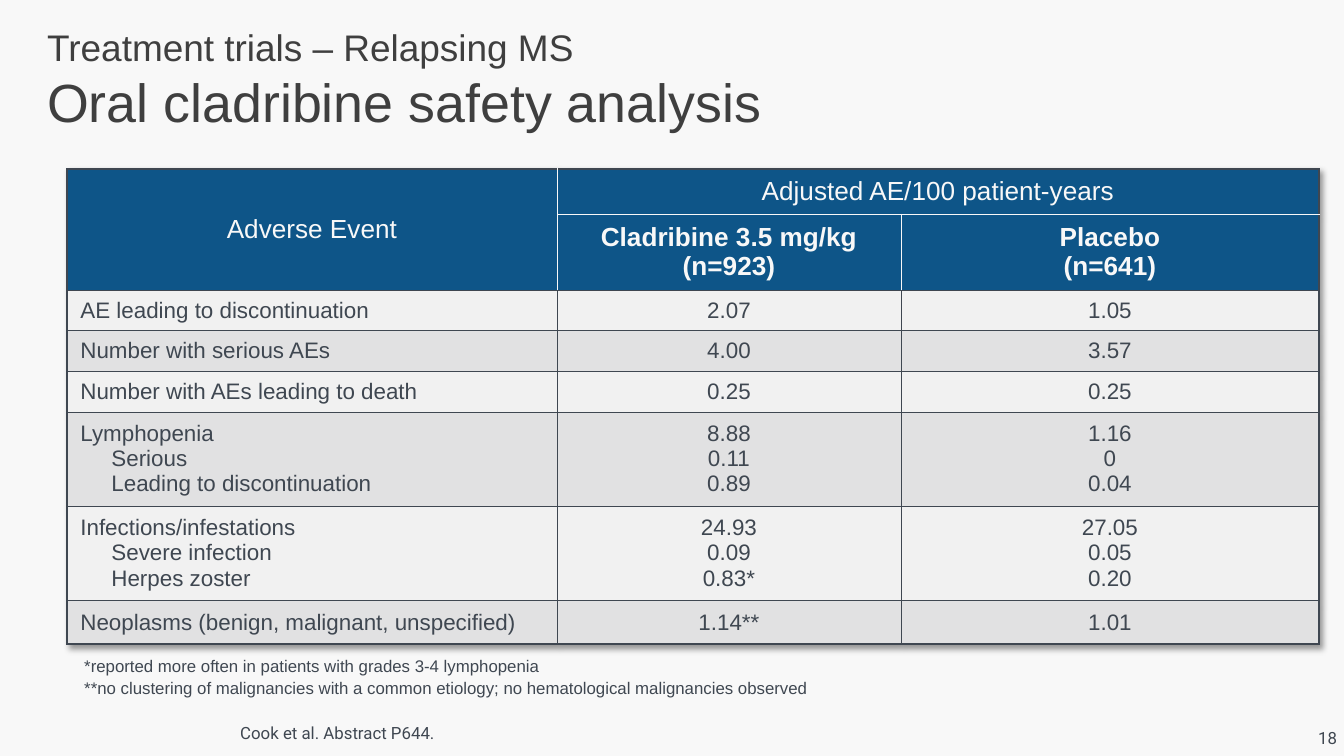
from dataclasses import dataclass

from lxml.etree import SubElement
from pptx import Presentation
from pptx.dml.color import RGBColor
from pptx.enum.text import MSO_ANCHOR, PP_ALIGN
from pptx.oxml.ns import qn
from pptx.util import Pt

SCALE = 9144000 / 1344


def px(length):
    return round(length * SCALE)


@dataclass(frozen=True)
class Theme:
    paper: str = "F8F8F8"
    ink: str = "3F4751"
    heading: str = "3F3F3F"
    header: str = "0E5588"
    bands: tuple = ("F1F1F1", "E1E1E2")
    sans: str = "Arial"
    footer: str = "Roboto"
    kicker_size: float = 19.8
    title_size: float = 28.8
    header_size: float = 14
    body_size: float = 12
    note_size: float = 9
    outer_line: float = 1
    inner_line: float = 0.25


class SlideWriter:
    def __init__(self, slide, theme):
        self.slide = slide
        self.theme = theme
        slide.background.fill.solid()
        slide.background.fill.fore_color.rgb = RGBColor.from_string(theme.paper)

    def style(self, font, color, **values):
        font.color.rgb = RGBColor.from_string(color)
        for name, value in values.items():
            setattr(font, name, value)

    def text_box(self, bounds, anchor, **margins):
        frame = self.slide.shapes.add_textbox(*map(px, bounds)).text_frame
        settings = {"word_wrap": True, "vertical_anchor": anchor}
        settings.update({name: px(value) for name, value in margins.items()})
        for name, value in settings.items():
            setattr(frame, name, value)
        return frame

    def title(self, bounds, kicker, heading):
        theme = self.theme
        para = self.text_box(bounds, MSO_ANCHOR.MIDDLE, margin_right=7).paragraphs[0]
        for text, size in ((kicker, theme.kicker_size), (heading, theme.title_size)):
            if para.runs:
                para.add_line_break()
            span = para.add_run()
            span.text = text
            self.style(span.font, theme.heading, name=theme.sans, size=Pt(size))

    def note(self, bounds, lines, font, anchor=MSO_ANCHOR.TOP, **margins):
        frame = self.text_box(bounds, anchor, **margins)
        frame.text = "\n".join(lines)
        for index, para in enumerate(frame.paragraphs):
            para.space_before = Pt(1 if index else 0)
            self.style(para.font, self.theme.ink, name=font, size=Pt(self.theme.note_size))

    def table(self, left, top, widths, heights):
        frame = self.slide.shapes.add_table(
            len(heights), len(widths), px(left), px(top), px(sum(widths)), px(sum(heights))
        )
        table = frame.table
        table.first_row = table.horz_banding = False
        for column, width in zip(table.columns, widths):
            column.width = px(width)
        for row, height in zip(table.rows, heights):
            row.height = px(height)
        return table

    def table_shadow(self, table):
        effects = SubElement(table._tbl.tblPr, qn("a:effectLst"))
        table._tbl.tblPr.insert(0, effects)
        values = {"blurRad": px(6), "dist": px(5), "dir": 2700000, "algn": "tl", "rotWithShape": 0}
        shadow = SubElement(effects, qn("a:outerShdw"), {k: str(v) for k, v in values.items()})
        color = SubElement(shadow, qn("a:srgbClr"), val="000000")
        SubElement(color, qn("a:alpha"), val="40000")

    def cell(self, cell, lines, fill, align, **font):
        cell.vertical_anchor = MSO_ANCHOR.MIDDLE
        cell.fill.solid()
        cell.fill.fore_color.rgb = RGBColor.from_string(fill)
        cell.text_frame.text = "\n".join(lines)
        color = self.theme.paper if fill == self.theme.header else self.theme.ink
        for index, para in enumerate(cell.text_frame.paragraphs):
            para.alignment = align
            if index and align == PP_ALIGN.LEFT:
                para._p.get_or_add_pPr().set("marL", str(px(31)))
            self.style(para.font, color, name=self.theme.sans, **font)

    def borders(self, cell, sides):
        properties = cell._tc.get_or_add_tcPr()
        for index, (side, (color, width)) in enumerate(sides.items()):
            line = SubElement(properties, qn(f"a:ln{side}"), w=str(Pt(width)))
            properties.insert(index, line)
            fill = SubElement(line, qn("a:solidFill"))
            SubElement(fill, qn("a:srgbClr"), val=color)

    def grid_lines(self, table, header_rows):
        theme = self.theme
        row_count, column_count = len(table.rows), len(table.columns)
        outer = (theme.ink, theme.outer_line)
        inner = (theme.ink, theme.inner_line)
        pale = (theme.paper, theme.inner_line)
        for row in range(row_count):
            for column in range(column_count):
                cell = table.cell(row, column)
                if cell.is_spanned:
                    continue
                right = column + (cell.span_width if cell.is_merge_origin else 1)
                bottom = row + (cell.span_height if cell.is_merge_origin else 1)
                upright = pale if row < header_rows else inner
                self.borders(cell, {
                    "L": upright if column else outer,
                    "R": outer if right == column_count else upright,
                    "T": outer if row == 0 else pale if row < header_rows else inner,
                    "B": outer if bottom == row_count else pale if bottom < header_rows else inner,
                })


HEADERS = {
    (0, 0): (["Adverse Event"], False),
    (0, 1): (["Adjusted AE/100 patient-years"], False),
    (1, 1): (["Cladribine 3.5 mg/kg", "(n=923)"], True),
    (1, 2): (["Placebo", "(n=641)"], True),
}
EVENTS = [
    (["AE leading to discontinuation"], ["2.07"], ["1.05"]),
    (["Number with serious AEs"], ["4.00"], ["3.57"]),
    (["Number with AEs leading to death"], ["0.25"], ["0.25"]),
    (["Lymphopenia", "Serious", "Leading to discontinuation"],
     ["8.88", "0.11", "0.89"], ["1.16", "0", "0.04"]),
    (["Infections/infestations", "Severe infection", "Herpes zoster"],
     ["24.93", "0.09", "0.83*"], ["27.05", "0.05", "0.20"]),
    (["Neoplasms (benign, malignant, unspecified)"], ["1.14**"], ["1.01"]),
]
FOOTNOTES = [
    "*reported more often in patients with grades 3-4 lymphopenia",
    "**no clustering of malignancies with a common etiology; no hematological malignancies observed",
]


def add_safety_table(writer):
    theme = writer.theme
    table = writer.table(67, 169, [490, 344, 418], [45, 76, 40, 41, 40, 94, 94, 44])
    table.cell(0, 0).merge(table.cell(1, 0))
    table.cell(0, 1).merge(table.cell(0, 2))
    for position, (lines, bold) in HEADERS.items():
        writer.cell(table.cell(*position), lines, theme.header, PP_ALIGN.CENTER,
                    size=Pt(theme.header_size), bold=bold)
    for index, event in enumerate(EVENTS):
        for column, lines in enumerate(event):
            align = PP_ALIGN.CENTER if column else PP_ALIGN.LEFT
            writer.cell(table.cell(index + 2, column), lines, theme.bands[index % 2], align,
                        size=Pt(theme.body_size), bold=False)
    writer.grid_lines(table, header_rows=2)
    writer.table_shadow(table)


def main():
    deck = Presentation()
    deck.slide_width, deck.slide_height = px(1344), px(756)
    theme = Theme()
    writer = SlideWriter(deck.slides.add_slide(deck.slide_layouts[6]), theme)
    writer.title((34, 16, 1277, 126), "Treatment trials – Relapsing MS", "Oral cladribine safety analysis")
    writer.note((1305, 719, 39, 31), ["18"], theme.footer, MSO_ANCHOR.MIDDLE,
                margin_right=0, margin_bottom=0)
    writer.note((227, 715, 884, 34), ["Cook et al. Abstract P644."], theme.footer, MSO_ANCHOR.BOTTOM)
    writer.note((71, 649, 1054, 54), FOOTNOTES, theme.sans)
    add_safety_table(writer)
    deck.save("out.pptx")


if __name__ == "__main__":
    main()
